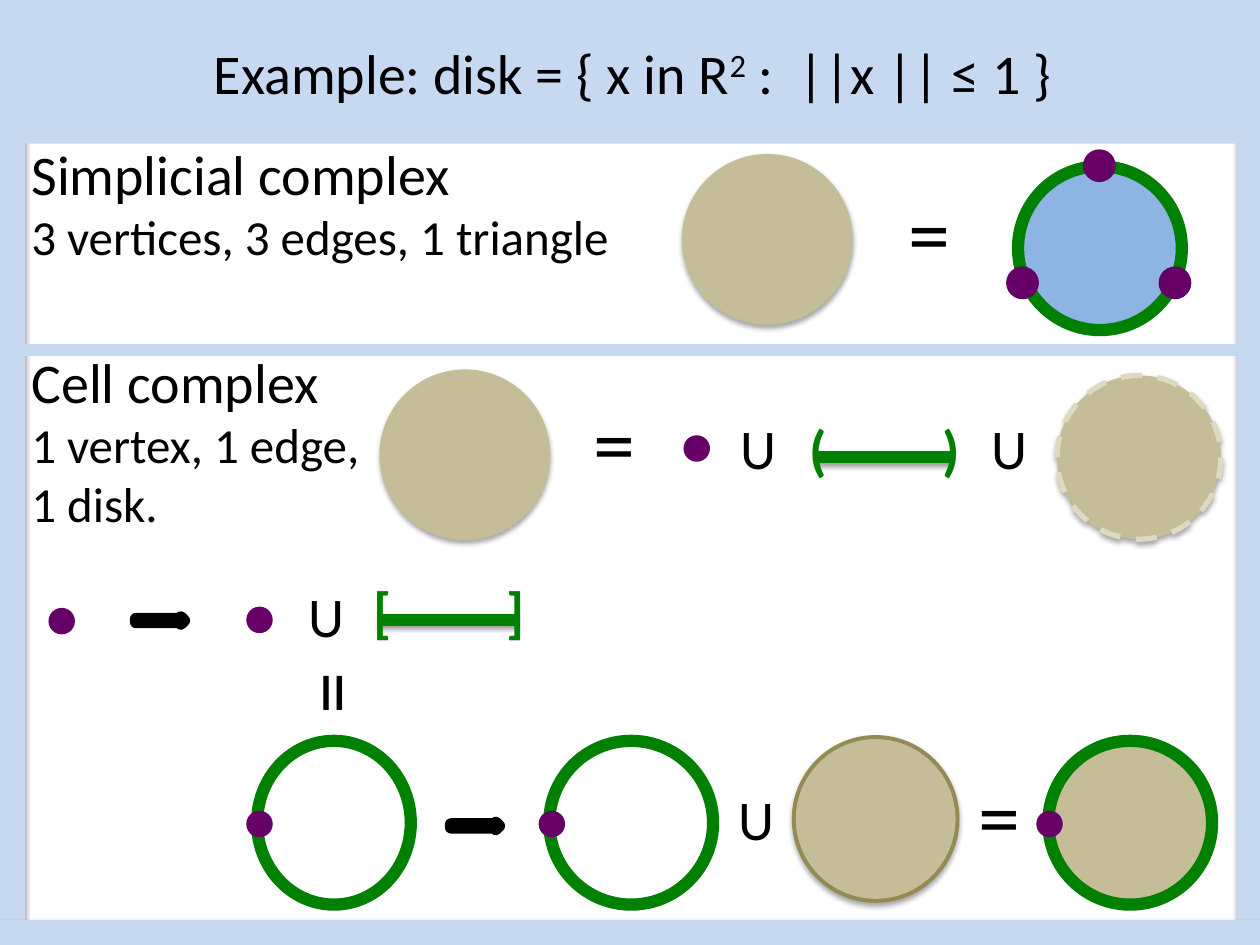
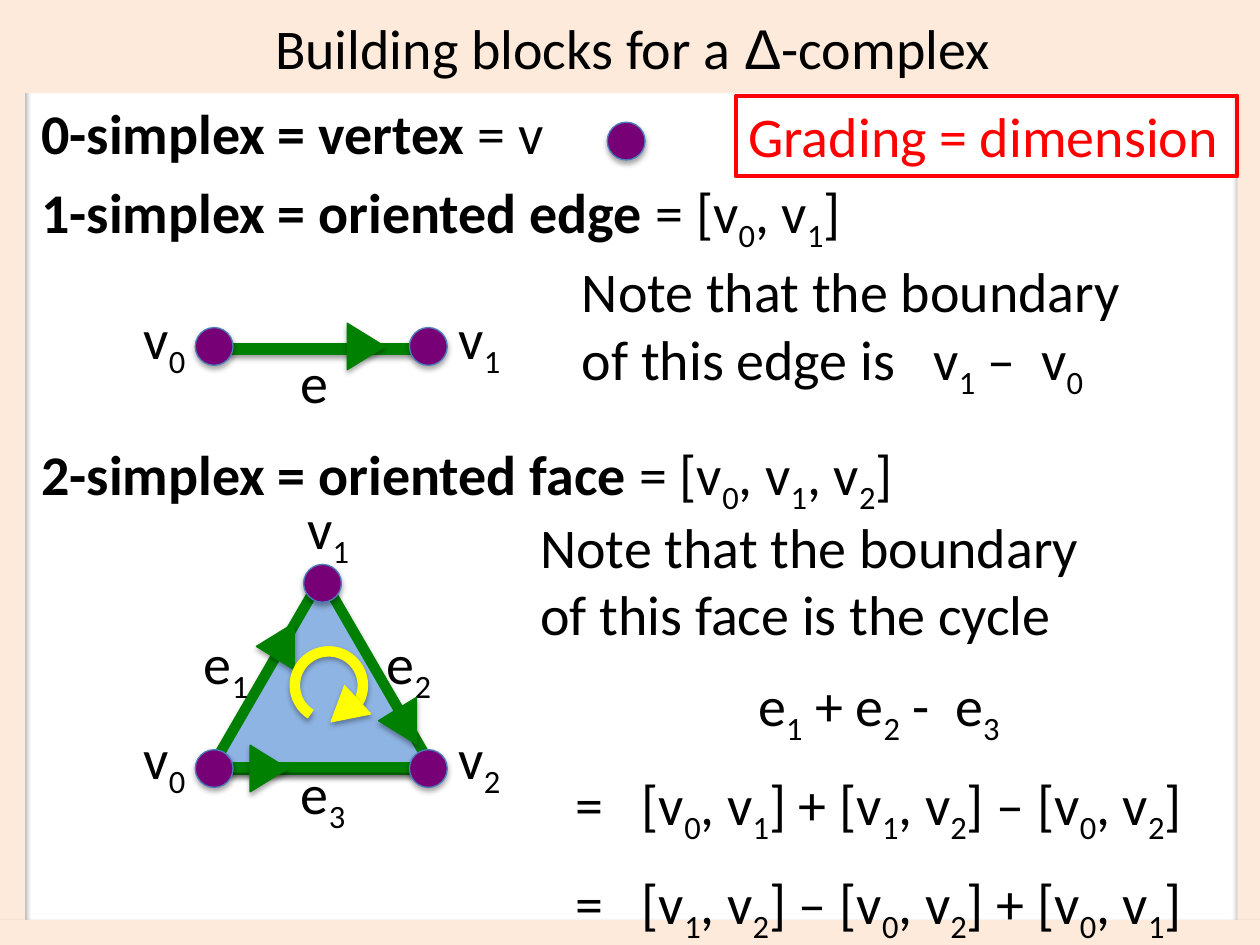
from lxml import etree
from pptx import Presentation
from pptx.dml.color import RGBColor
from pptx.enum.dml import MSO_LINE
from pptx.enum.shapes import MSO_CONNECTOR, MSO_SHAPE
from pptx.enum.text import MSO_ANCHOR, PP_ALIGN
from pptx.oxml.ns import qn
from pptx.util import Inches, Pt

FONT = "Calibri"
COLORS = {
    "black": "000000", "red": "FF0000", "yellow": "FFFF00",
    "blue frame": "C6D9F1", "peach frame": "FDEADA",
    "edge": "008000", "vertex": "660066", "bright vertex": "770077",
    "vertex rim": "4B7EBC", "face": "8EB4E3",
    "disk": "C4BD97", "disk rim": "948A54", "open rim": "DDD9C3",
}

# Text markup: _x is a subscript, ^x a superscript, * switches bold on or off.
# Labels: text, left, top, width
DISK_TITLE = "Example: disk = { x in R^2 :  ||x || ≤ 1 }"
DISK_HEADINGS = [
    (["Simplicial complex", "3 vertices, 3 edges, 1 triangle"], 1.06, 4.85, 1.11),
    (["Cell complex", "1 vertex, 1 edge, 1 disk."], 2.71, 2.99, 2.12),
]
UNIONS = [(5.78, 3.23), (7.77, 3.23), (2.35, 4.57), (5.76, 6.18)]
EQUALS = [(7.11, 1.38, 0), (4.61, 3.05, 0), (2.39, 5.08, 90), (7.67, 6.01, 0)]
# Disks and circles: left, top, width, fill, rim, rim width, dashed, shadow
DISKS = [
    (5.44, 1.25, 1.3, "disk", "disk", 4, False, True),
    (8.08, 1.32, 1.3, "face", "edge", 7, False, False),
    (3.04, 2.96, 1.3, "disk", "disk", 4, False, True),
    (8.39, 2.98, 1.3, "disk", "open rim", 3, True, True),
    (2.04, 5.88, 1.22, None, "edge", 7, False, False),
    (4.36, 5.88, 1.3, None, "edge", 7, False, False),
    (6.3, 5.85, 1.3, "disk", "disk rim", 2.25, False, True),
    (8.32, 5.88, 1.3, "disk", "edge", 7, False, False),
]
TRIANGLE_VERTICES = [(7.99, 2.12), (9.2, 2.12), (8.6, 1.19)]
CELL_VERTICES = [(5.43, 3.46), (1.96, 4.82), (0.39, 4.83),
                 (1.96, 6.44), (4.28, 6.44), (8.23, 6.44)]
# Intervals: brackets, left and top of the first one, height of the bar
INTERVALS = [("()", 6.33, 3.24, 3.63), ("[]", 2.87, 4.53, 4.92)]
BRACKET_GAP = 1.05
ATTACHING_ARROWS = [(1.08, 4.9), (3.58, 6.53)]

SIMPLEX_TITLE = "Building blocks for a Δ-complex"
SIMPLEX_LINES = [
    ("*0-simplex = vertex *= v", 0.23, 0.73, 4.3),
    ("*1-simplex = oriented edge *= [v_0, v_1]", 0.23, 1.36, 9.05),
    ("*2-simplex = oriented face *= [v_0, v_1, v_2]", 0.23, 3.44, 9.05),
]
EDGE_NOTE = "Note that the boundary of this edge is   v_1 –  v_0"
FACE_NOTE = ["Note that the boundary", "of this face is the cycle"]
FACE_CYCLE = [
    "e_1 + e_2 -  e_3",
    "=   [v_0, v_1] + [v_1, v_2] – [v_0, v_2]",
    "=   [v_1, v_2] – [v_0, v_2] + [v_0, v_1]",
]
GRADING = "Grading = dimension"
SIMPLEX_LABELS = [
    ("v_0", 1.04, 2.36), ("v_1", 3.54, 2.36), ("e", 2.29, 2.71),
    ("v_1", 2.34, 3.87), ("v_0", 1.04, 5.69), ("v_2", 3.54, 5.69),
    ("e_1", 1.52, 4.94), ("e_2", 2.97, 4.94), ("e_3", 2.29, 5.97),
]
SIMPLEX_VERTICES = [(4.82, 0.97), (1.55, 2.6), (3.25, 2.6),
                    (1.55, 5.95), (3.25, 5.95), (2.41, 4.48)]
SIMPLEX_EDGES = [(2.77, 7), (6.12, 5)]
# Arrowheads: left, top, rotation
EDGE_ARROWHEADS = [(2.72, 2.6, 90), (1.95, 5.95, 90), (2.97, 5.57, 270), (2, 4.98, 270)]


def rgb(name):
    return RGBColor.from_string(COLORS[name])


def set_effects(shape, alpha):
    """Give the shape its own effect list, with a soft shadow if alpha is set."""
    effects = etree.SubElement(shape._element.spPr, qn("a:effectLst"))
    if alpha:
        shadow = etree.SubElement(effects, qn("a:outerShdw"), blurRad=str(Pt(3.1)),
                                  dist=str(Pt(1.8)), dir="5400000", rotWithShape="0")
        color = etree.SubElement(shadow, qn("a:srgbClr"), val=COLORS["black"])
        etree.SubElement(color, qn("a:alpha"), val=str(alpha * 1000))


def add_shape(slide, kind, box, fill=None, line=None, width=0.75,
              dashed=False, shadow=False, rotation=0):
    shape = slide.shapes.add_shape(kind, *map(Inches, box))
    shape.rotation = rotation
    if fill:
        shape.fill.solid()
        shape.fill.fore_color.rgb = rgb(fill)
    else:
        shape.fill.background()
    if line:
        shape.line.color.rgb = rgb(line)
        shape.line.width = Pt(width)
        if dashed:
            shape.line.dash_style = MSO_LINE.DASH
    else:
        shape.line.fill.background()
    set_effects(shape, 35 if shadow else 0)
    return shape


def add_line(slide, left, right, top, color, width, shadow=False):
    line = slide.shapes.add_connector(
        MSO_CONNECTOR.STRAIGHT, *map(Inches, (left, top, right, top)))
    line.line.color.rgb = rgb(color)
    line.line.width = Pt(width)
    set_effects(line, 38 if shadow else 0)


def split_markup(text):
    """Return [text, bold, baseline, font] for each run of equal format."""
    runs, bold, baseline = [], False, 0
    for char in text:
        if char == "*":
            bold = not bold
        elif char in "_^":
            baseline = -25 if char == "_" else 30
        else:
            style = [bold, baseline, "Arial" if char == "Δ" else FONT]
            if runs and runs[-1][1:] == style:
                runs[-1][0] += char
            else:
                runs.append([char] + style)
            baseline = 0
    return runs


def write_line(paragraph, text, size=32, color="black", align=PP_ALIGN.LEFT, spacing=None):
    paragraph.alignment = align
    paragraph.line_spacing = spacing
    paragraph.font.size = Pt(size)
    for content, bold, baseline, font in split_markup(text):
        run = paragraph.add_run()
        run.text = content
        run.font.name = font
        run.font.size = Pt(size)
        run.font.bold = bold
        run.font.color.rgb = rgb(color)
        if baseline:
            run.font._element.set("baseline", str(baseline * 1000))


def add_text(slide, text, left, top, width, height=0.64, rotation=0, **style):
    box = slide.shapes.add_textbox(*map(Inches, (left, top, width, height)))
    box.rotation = rotation
    box.text_frame.word_wrap = True
    write_line(box.text_frame.paragraphs[0], text, **style)
    return box.text_frame


def add_framed_slide(presentation, title, title_height, color):
    """Add a blank slide with coloured edges and a title band."""
    slide = presentation.slides.add_slide(presentation.slide_layouts[6])
    for box in [(0, 0, 0.2, 7.5), (9.82, 0, 0.2, 7.5), (-0.01, 7.3, 10.01, 0.2)]:
        add_shape(slide, MSO_SHAPE.RECTANGLE, box, color, shadow=True)
    band = add_shape(slide, MSO_SHAPE.RECTANGLE, (0.02, 0, 10, title_height), color)
    band.text_frame.vertical_anchor = MSO_ANCHOR.MIDDLE
    write_line(band.text_frame.paragraphs[0], title, align=PP_ALIGN.CENTER)
    return slide


def build_disk_slide(presentation):
    slide = add_framed_slide(presentation, DISK_TITLE, 1.14, "blue frame")
    for (heading, counts), top, width, height in DISK_HEADINGS:
        frame = add_text(slide, heading, 0.15, top, width, height)
        write_line(frame.add_paragraph(), counts, size=28)
    add_line(slide, 0.15, 9.95, 2.78, "blue frame", 7)
    for left, top, width, *style in DISKS:
        add_shape(slide, MSO_SHAPE.OVAL, (left, top, width, 1.3), *style)
    for vertices, size in [(TRIANGLE_VERTICES, 0.25), (CELL_VERTICES, 0.2)]:
        for left, top in vertices:
            add_shape(slide, MSO_SHAPE.OVAL, (left, top, size, size), "vertex", "vertex")
    for brackets, left, top, bar_top in INTERVALS:
        add_line(slide, left + 0.14, left + 1.23, bar_top, "edge", 7, shadow=True)
        for index, bracket in enumerate(brackets):
            add_text(slide, "*" + bracket, left + index * BRACKET_GAP, top, 0.5, color="edge")
    for left, top in UNIONS:
        add_text(slide, "U", left, top, 0.59)
    for left, top, rotation in EQUALS:
        add_text(slide, "=", left, top, 0.6, 0.91, rotation, size=48)
    for left, top in ATTACHING_ARROWS:
        add_shape(slide, MSO_SHAPE.RIGHT_ARROW, (left, top, 0.38, 0.05), "black", "black", 7)


def add_orientation_arrow(slide):
    arc = add_shape(slide, MSO_SHAPE.ARC, (2.34, 5.17, 0.54, 0.54),
                    line="yellow", width=6, shadow=True)
    for index, degrees in enumerate((122, 30)):
        arc.adjustments[index] = degrees * 0.6
    add_shape(slide, MSO_SHAPE.ISOSCELES_TRIANGLE, (2.6, 5.44, 0.32, 0.26),
              "yellow", "yellow", shadow=True, rotation=348.8)


def build_simplex_slide(presentation):
    slide = add_framed_slide(presentation, SIMPLEX_TITLE, 0.74, "peach frame")
    for top, width in SIMPLEX_EDGES:
        add_line(slide, 1.82, 3.34, top, "edge", width, shadow=True)
    add_shape(slide, MSO_SHAPE.ISOSCELES_TRIANGLE, (1.68, 4.58, 1.75, 1.51),
              "face", "edge", 6, shadow=True)
    for left, top in SIMPLEX_VERTICES:
        add_shape(slide, MSO_SHAPE.OVAL, (left, top, 0.3, 0.3),
                  "bright vertex", "vertex rim", shadow=True)
    for text, left, top in SIMPLEX_LABELS:
        add_text(slide, text, left, top, 0.71)
    for left, top, rotation in EDGE_ARROWHEADS:
        add_shape(slide, MSO_SHAPE.ISOSCELES_TRIANGLE, (left, top, 0.37, 0.3),
                  "edge", "edge", shadow=True, rotation=rotation)
    add_orientation_arrow(slide)
    for line in SIMPLEX_LINES:
        add_text(slide, *line)
    add_text(slide, EDGE_NOTE, 4.52, 1.99, 4.74, 1.18)
    frame = add_text(slide, FACE_NOTE[0], 4.19, 4.02, 5.57, 3.25)
    write_line(frame.add_paragraph(), FACE_NOTE[1])
    for text in FACE_CYCLE:
        write_line(frame.add_paragraph(), text, align=PP_ALIGN.CENTER, spacing=1.3)
    grading = add_shape(slide, MSO_SHAPE.RECTANGLE, (5.84, 0.76, 3.98, 0.64),
                        line="red", width=2.25)
    grading.text_frame.vertical_anchor = MSO_ANCHOR.TOP
    write_line(grading.text_frame.paragraphs[0], GRADING, color="red")


def main():
    presentation = Presentation()
    presentation.slide_width, presentation.slide_height = Inches(10), Inches(7.5)
    build_disk_slide(presentation)
    build_simplex_slide(presentation)
    presentation.save("out.pptx")


if __name__ == "__main__":
    main()
